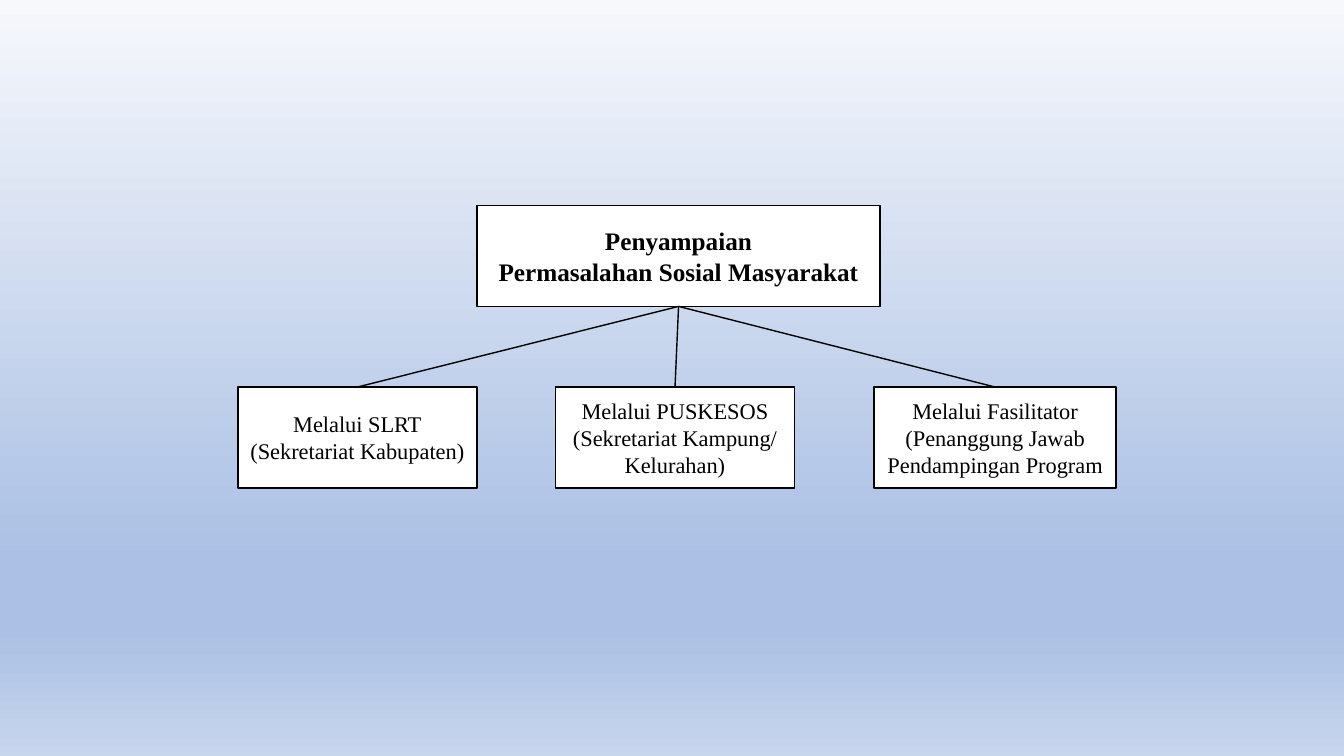
from dataclasses import dataclass

from lxml import etree
from pptx import Presentation
from pptx.dml.color import RGBColor
from pptx.enum.shapes import MSO_CONNECTOR, MSO_SHAPE
from pptx.enum.text import MSO_ANCHOR, PP_ALIGN
from pptx.oxml.ns import qn
from pptx.shapes.autoshape import Shape
from pptx.slide import Slide
from pptx.util import Inches, Pt

RECT = MSO_SHAPE.RECTANGLE
STRAIGHT = MSO_CONNECTOR.STRAIGHT
CENTER = PP_ALIGN.CENTER
MIDDLE = MSO_ANCHOR.MIDDLE
TOP, BOTTOM = 0, 2


@dataclass(frozen=True)
class Theme:
    font: str = "Times New Roman"
    ink: RGBColor = RGBColor(0, 0, 0)
    paper: RGBColor = RGBColor(255, 255, 255)
    head: Pt = Pt(18)
    body: Pt = Pt(16)
    line: Pt = Pt(1)
    stops: tuple[tuple[int, str], ...] = (
        (0, "F6F8FC"),
        (74, "ABC0E4"),
        (83, "ABC0E4"),
        (100, "C7D5ED"),
    )


@dataclass(frozen=True)
class Box:
    left: float
    top: float
    width: float
    lines: tuple[str, ...]
    size: Pt
    bold: bool = False
    height: float = 1


THEME = Theme()
ROW = 3.84
ROOT = Box(4.73, 2.04, 4, ("Penyampaian", "Permasalahan Sosial Masyarakat"), THEME.head, True)
LEAVES = (
    Box(2.36, ROW, 2.37, ("Melalui SLRT", "(Sekretariat Kabupaten)"), THEME.body),
    Box(5.51, ROW, 2.37, ("Melalui PUSKESOS", "(Sekretariat Kampung/ Kelurahan)"), THEME.body),
    Box(8.67, ROW, 2.4, ("Melalui Fasilitator (Penanggung Jawab Pendampingan Program",), THEME.body),
)


def paint_back(slide: Slide) -> None:
    fill = slide.background.fill
    fill.gradient()
    fill.gradient_angle = 270
    stops = next(slide.element.iter(qn("a:gsLst")))
    stops.clear()
    for place, color in THEME.stops:
        stop = etree.SubElement(stops, qn("a:gs"), pos=str(place * 1000))
        etree.SubElement(stop, qn("a:srgbClr"), val=color)


def draw_box(slide: Slide, box: Box) -> Shape:
    shape = slide.shapes.add_shape(
        RECT, Inches(box.left), Inches(box.top), Inches(box.width), Inches(box.height)
    )
    shape.shadow.inherit = False
    shape.fill.solid()
    shape.fill.fore_color.rgb = THEME.paper
    shape.line.color.rgb = THEME.ink
    shape.line.width = THEME.line
    frame = shape.text_frame
    frame.word_wrap = True
    frame.vertical_anchor = MIDDLE
    for index, line in enumerate(box.lines):
        para = frame.add_paragraph() if index else frame.paragraphs[0]
        para.alignment = CENTER
        run = para.add_run()
        run.text = line
        run.font.name = THEME.font
        run.font.size = box.size
        run.font.bold = box.bold
        run.font.color.rgb = THEME.ink
    return shape


def join(slide: Slide, root: Shape, leaf: Shape) -> None:
    link = slide.shapes.add_connector(STRAIGHT, 0, 0, 0, 0)
    link.begin_connect(root, BOTTOM)
    link.end_connect(leaf, TOP)
    link.line.color.rgb = THEME.ink
    link.line.width = THEME.line
    etree.SubElement(link.element.spPr, qn("a:effectLst"))


def main() -> None:
    deck = Presentation()
    deck.slide_width = Inches(13.33)
    deck.slide_height = Inches(7.5)
    slide = deck.slides.add_slide(deck.slide_layouts.get_by_name("Blank"))
    paint_back(slide)
    root = draw_box(slide, ROOT)
    leaves = [draw_box(slide, box) for box in LEAVES]
    for leaf in leaves:
        join(slide, root, leaf)
    deck.save("out.pptx")


if __name__ == "__main__":
    main()
